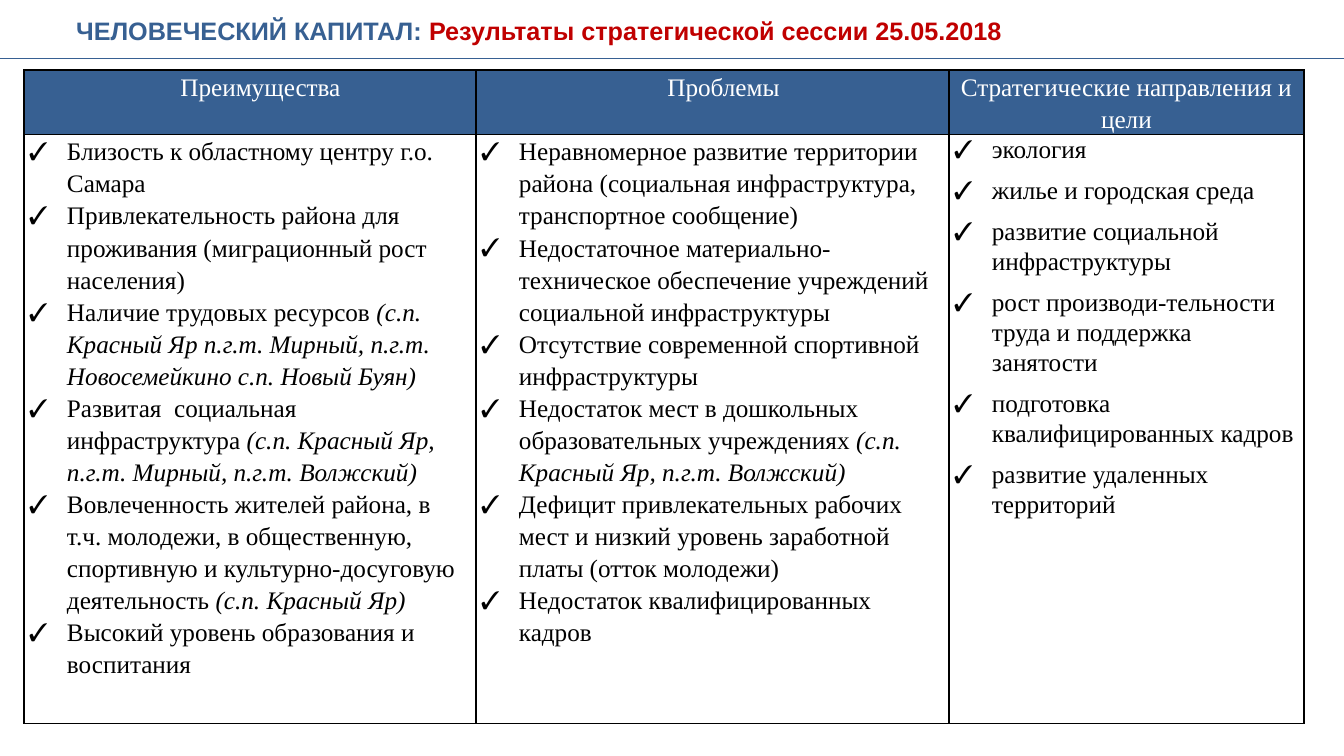
from lxml import etree
from pptx import Presentation
from pptx.dml.color import RGBColor
from pptx.enum.shapes import MSO_CONNECTOR
from pptx.enum.text import MSO_ANCHOR, MSO_AUTO_SIZE, PP_ALIGN
from pptx.oxml.ns import qn
from pptx.util import Emu, Pt

SCALE = 12192000 / 1344
W, H = 1344, 756
CENTER, LEFT, JUSTIFY = PP_ALIGN.CENTER, PP_ALIGN.LEFT, PP_ALIGN.JUSTIFY
MIDDLE, TOP = MSO_ANCHOR.MIDDLE, MSO_ANCHOR.TOP
NO_AUTOFIT = MSO_AUTO_SIZE.NONE
STRAIGHT = MSO_CONNECTOR.STRAIGHT
BLUE, RED, BLACK, WHITE = "376092", "C00000", "000000", "FFFFFF"
SANS, SERIF = "Arial", "Times New Roman"
TITLE_ONLY = 5

ADVANTAGES = [
    ("Близость к областному центру г.о. Самара", ""),
    ("Привлекательность района для проживания (миграционный рост населения)", ""),
    ("Наличие трудовых ресурсов ",
     "(с.п. Красный Яр п.г.т. Мирный, п.г.т. Новосемейкино с.п. Новый Буян)"),
    ("Развитая  социальная инфраструктура ",
     "(с.п. Красный Яр, п.г.т. Мирный, п.г.т. Волжский)"),
    ("Вовлеченность жителей района, в т.ч. молодежи, в общественную, спортивную "
     "и культурно-досуговую деятельность ", "(с.п. Красный Яр)"),
    ("Высокий уровень образования и воспитания", ""),
]
PROBLEMS = [
    ("Неравномерное развитие территории района (социальная инфраструктура, "
     "транспортное сообщение)", ""),
    ("Недостаточное материально-техническое обеспечение учреждений "
     "социальной инфраструктуры", ""),
    ("Отсутствие современной спортивной инфраструктуры", ""),
    ("Недостаток мест в дошкольных образовательных учреждениях ",
     "(с.п. Красный Яр, п.г.т. Волжский)"),
    ("Дефицит привлекательных рабочих мест и низкий уровень заработной платы "
     "(отток молодежи)", ""),
    ("Недостаток квалифицированных кадров", ""),
]
GOALS = [
    ("экология", ""),
    ("жилье и городская среда", ""),
    ("развитие социальной инфраструктуры", ""),
    ("рост производи-тельности труда и поддержка занятости", ""),
    ("подготовка квалифицированных кадров", ""),
    ("развитие удаленных территорий", ""),
]
COLUMNS = [
    dict(header="Преимущества", width=452, indent=21, items=ADVANTAGES, spacing=1.15, after=0),
    dict(header="Проблемы", width=473, indent=22, items=PROBLEMS, spacing=1.15, after=0),
    dict(header="Стратегические направления и цели", width=355, indent=0, items=GOALS,
         spacing=1.07, after=8),
]
ROW_HEIGHTS = [64, 589]


def px(n):
    """Turn pixels into EMU."""
    return Emu(round(n * SCALE))


def rgb(color):
    """Turn a hex string into a colour."""
    return RGBColor.from_string(color)


def add_text(p, text, font=SERIF, size=18, color=BLACK, bold=False, italic=False):
    """Add a formatted run to a paragraph."""
    r = p.add_run()
    r.text = text
    r.font.name, r.font.size = font, Pt(size)
    r.font.bold, r.font.italic = bold, italic
    r.font.color.rgb = rgb(color)


def format_paragraph(p, align=LEFT, spacing=1.15, after=0, margin=0, hanging=0, bullet=None):
    """Set alignment, spacing, indents and bullet of a paragraph."""
    p.alignment, p.line_spacing, p.space_after = align, spacing, Pt(after)
    pPr = p._p.get_or_add_pPr()
    pPr.set("marL", str(px(margin)))
    pPr.set("indent", str(px(-hanging)))
    if bullet:
        etree.SubElement(pPr, qn("a:buFont")).set("typeface", SERIF)
        etree.SubElement(pPr, qn("a:buChar")).set("char", bullet)


def format_cell(cell, fill):
    """Set margins, black borders and fill of a table cell."""
    cell.margin_left = cell.margin_right = px(5)
    cell.margin_top = cell.margin_bottom = 0
    cell.vertical_anchor = TOP
    tcPr = cell._tc.get_or_add_tcPr()
    for side in ("a:lnL", "a:lnR", "a:lnT", "a:lnB"):
        ln = etree.SubElement(tcPr, qn(side), w=str(Pt(1)))
        solid = etree.SubElement(ln, qn("a:solidFill"))
        etree.SubElement(solid, qn("a:srgbClr"), val=BLACK)
    cell.fill.solid()
    cell.fill.fore_color.rgb = rgb(fill)


def add_heading(s, x, y, w, h):
    """Place the two-colour title and the rule under it."""
    sp = s.shapes.title
    sp.left, sp.top, sp.width, sp.height = px(x), px(y), px(w), px(h)
    tf = sp.text_frame
    tf.word_wrap, tf.auto_size, tf.vertical_anchor = True, NO_AUTOFIT, MIDDLE
    p = tf.paragraphs[0]
    p.alignment = JUSTIFY
    add_text(p, "ЧЕЛОВЕЧЕСКИЙ КАПИТАЛ: ", font=SANS, color=BLUE, bold=True)
    add_text(p, "Результаты стратегической сессии 25.05.2018", font=SANS, color=RED, bold=True)
    rule_y = px(y + h + 9)
    rule = s.shapes.add_connector(STRAIGHT, 0, rule_y, px(W), rule_y)
    rule.line.color.rgb, rule.line.width = rgb(BLUE), Pt(0.75)
    etree.SubElement(rule._element.spPr, qn("a:effectLst"))


def add_results(s, x, y):
    """Place the table of session results."""
    width = sum(column["width"] for column in COLUMNS)
    table = s.shapes.add_table(len(ROW_HEIGHTS), len(COLUMNS), px(x), px(y),
                               px(width), px(sum(ROW_HEIGHTS))).table
    table.first_row = table.horz_banding = False
    for row, height in zip(table.rows, ROW_HEIGHTS):
        row.height = px(height)
    for i, column in enumerate(COLUMNS):
        table.columns[i].width = px(column["width"])
        header, body = table.cell(0, i), table.cell(1, i)
        format_cell(header, BLUE)
        format_cell(body, WHITE)
        p = header.text_frame.paragraphs[0]
        format_paragraph(p, align=CENTER, margin=column["indent"])
        add_text(p, column["header"], color=WHITE)
        tf = body.text_frame
        for n, (text, places) in enumerate(column["items"]):
            p = tf.add_paragraph() if n else tf.paragraphs[0]
            format_paragraph(p, spacing=column["spacing"], after=column["after"],
                             margin=38, hanging=38, bullet="✓")
            add_text(p, text)
            if places:
                add_text(p, places, italic=True)


def main():
    """Build and save the slide."""
    prs = Presentation()
    prs.slide_width, prs.slide_height = px(W), px(H)
    s = prs.slides.add_slide(prs.slide_layouts[TITLE_ONLY])
    add_heading(s, 66, 11, 1170, 39)
    add_results(s, 24, 70)
    prs.save("out.pptx")


if __name__ == "__main__":
    main()
